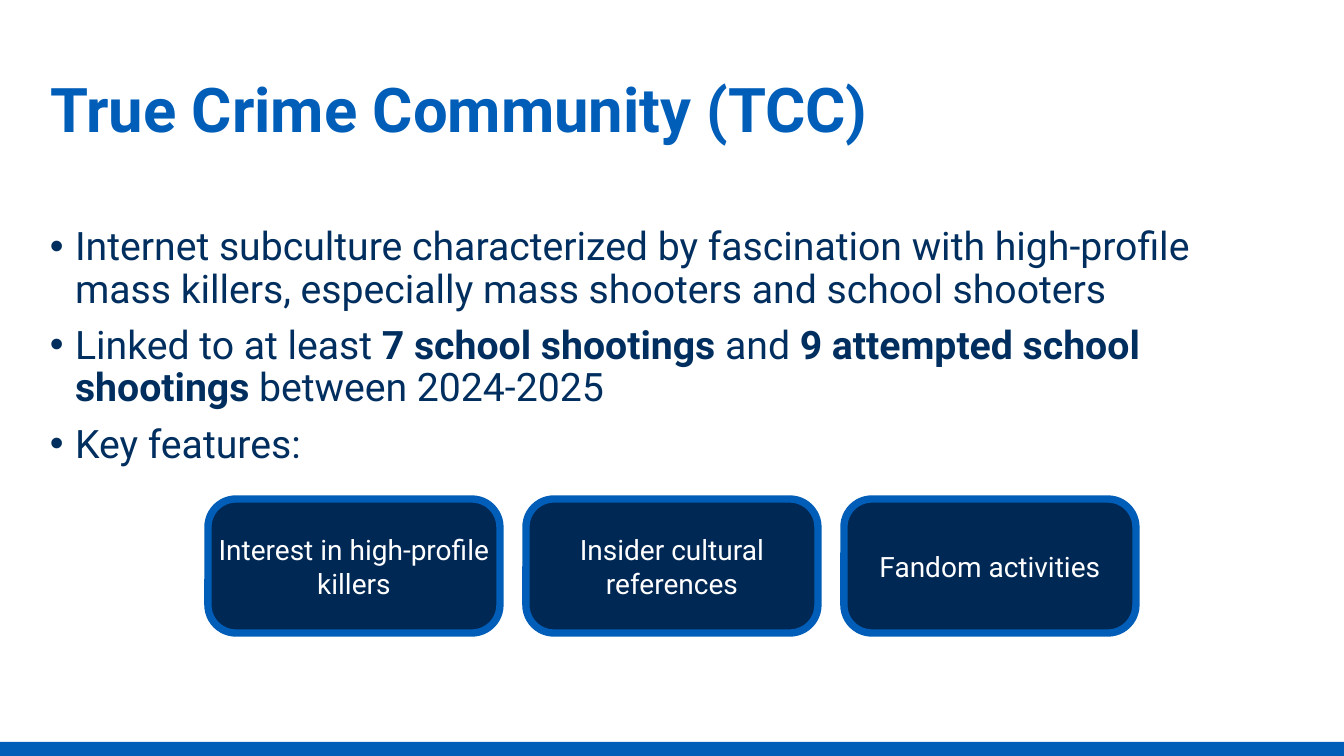
from dataclasses import dataclass

from lxml import etree
from pptx import Presentation, util as u
from pptx.dml.color import RGBColor
from pptx.enum import shapes, text
from pptx.oxml import ns

EMU_PER_PX = 914400 / 100.8
FONT = "Roboto"
COLORS = {
    "blue": "005EB8",
    "body": "002F5F",
    "box": "002855",
    "white": "FFFFFF",
}


@dataclass
class Run:
    text: str
    bold: bool = False


@dataclass
class Feature:
    label: str
    column: int


BODY = [
    [Run("Internet subculture characterized by fascination with high-profile "
         "mass killers, especially mass shooters and school shooters")],
    [Run("Linked to at least "), Run("7 school shootings ", True), Run("and "),
     Run("9 attempted school shootings", True), Run(" between 2024-2025")],
    [Run("Key features:")],
]
FEATURES = [
    Feature(label, column) for column, label in enumerate(
        ["Interest in high-profile killers", "Insider cultural references",
         "Fandom activities"])
]
FEATURE_LEFT, FEATURE_TOP = 208, 499
FEATURE_WIDTH, FEATURE_HEIGHT, FEATURE_GAP = 292, 134, 26
CORNER_RADIUS = 28


def px(length: int) -> u.Emu:
    return u.Emu(round(length * EMU_PER_PX))


def color(name: str) -> RGBColor:
    return RGBColor.from_string(COLORS[name])


def add_bullet(paragraph) -> None:
    properties = paragraph._p.get_or_add_pPr()
    properties.set("marL", str(u.Inches(0.25)))
    properties.set("indent", str(-u.Inches(0.25)))
    etree.SubElement(properties, ns.qn("a:buFont"), typeface="Arial")
    etree.SubElement(properties, ns.qn("a:buChar"), char="•")


def write(shape, paragraphs: list[list[Run]], *, size: int, ink: str,
          align=text.PP_ALIGN.LEFT, anchor=text.MSO_ANCHOR.MIDDLE,
          line_spacing: float = 1.0, space_before: int = 0,
          bullets: bool = False) -> None:
    frame = shape.text_frame
    frame.word_wrap = True
    frame.auto_size = text.MSO_AUTO_SIZE.NONE
    frame.vertical_anchor = anchor
    for index, runs in enumerate(paragraphs):
        paragraph = frame.add_paragraph() if index else frame.paragraphs[0]
        if bullets:
            add_bullet(paragraph)
        paragraph.alignment = align
        paragraph.line_spacing = line_spacing
        paragraph.space_before = u.Pt(space_before if index else 0)
        for item in runs:
            run = paragraph.add_run()
            run.text = item.text
            run.font.name = FONT
            run.font.size = u.Pt(size)
            run.font.bold = item.bold
            run.font.color.rgb = color(ink)


def add_box(slide, kind, left: int, top: int, width: int, height: int,
            fill: str):
    shape = slide.shapes.add_shape(kind, px(left), px(top), px(width), px(height))
    shape.shadow.inherit = False
    shape.fill.solid()
    shape.fill.fore_color.rgb = color(fill)
    shape.line.fill.background()
    return shape


def add_feature(slide, feature: Feature) -> None:
    left = FEATURE_LEFT + feature.column * (FEATURE_WIDTH + FEATURE_GAP)
    shape = add_box(slide, shapes.MSO_SHAPE.ROUNDED_RECTANGLE, left, FEATURE_TOP,
                    FEATURE_WIDTH, FEATURE_HEIGHT, "box")
    shape.adjustments[0] = CORNER_RADIUS / FEATURE_HEIGHT
    shape.line.color.rgb = color("blue")
    shape.line.width = u.Pt(5.25)
    frame = shape.text_frame
    frame.margin_left = frame.margin_right = 0
    write(shape, [[Run(feature.label)]], size=20, ink="white",
          align=text.PP_ALIGN.CENTER)


def main() -> None:
    presentation = Presentation()
    presentation.slide_width, presentation.slide_height = px(1344), px(756)
    slide = presentation.slides.add_slide(presentation.slide_layouts[5])

    # Footer band
    add_box(slide, shapes.MSO_SHAPE.RECTANGLE, 0, 742, 1344, 14, "blue")

    # Title
    title = slide.shapes.title
    title.left, title.top, title.width, title.height = map(px, (40, 40, 963, 146))
    write(title, [[Run("True Crime Community (TCC)", True)]], size=44,
          ink="blue", line_spacing=0.9)

    # Bullet points
    body = slide.shapes.add_textbox(*map(px, (40, 222, 1252, 442)))
    write(body, BODY, size=28, ink="body", anchor=text.MSO_ANCHOR.TOP,
          line_spacing=0.9, space_before=10, bullets=True)

    # Key features
    for feature in FEATURES:
        add_feature(slide, feature)

    presentation.save("out.pptx")


if __name__ == "__main__":
    main()
